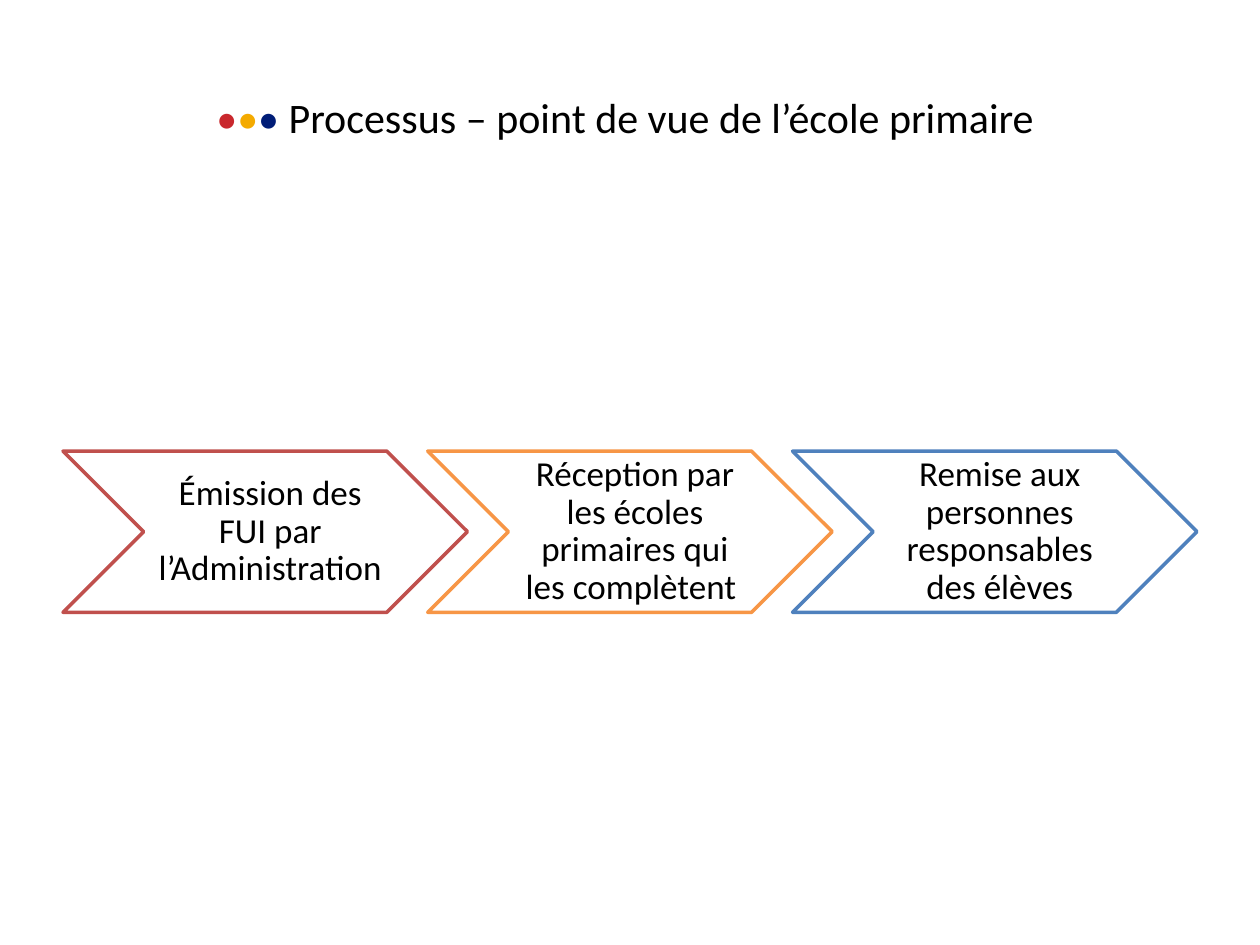
from pptx import Presentation
from pptx.dml.color import RGBColor
from pptx.enum.shapes import MSO_SHAPE as Shape
from pptx.enum.text import MSO_ANCHOR as Anchor, PP_ALIGN as Align
from pptx.util import Inches, Pt

TITLE = [
    ("•", "C9282D"),
    ("•", "F4AA00"),
    ("• ", "001D77"),
    ("Processus – point de vue de l’école primaire ", "000000"),
]
STEPS = [
    ("Émission des FUI par l’Administration", "C0504D"),
    ("Réception par les écoles primaires qui les complètent ", "F79646"),
    ("Remise aux personnes responsables des élèves", "4F81BD"),
]
FONT = "Calibri"
WIDTH, HEIGHT = 10, 7.5
MARGIN = WIDTH * 0.05
STEP_WIDTH, STEP_HEIGHT = 3.21, 1.28
STEP_TOP = 3.58
# The steps share the width between the margins and overlap evenly.
STEP_PITCH = (WIDTH - 2 * MARGIN - STEP_WIDTH) / (len(STEPS) - 1)
LABEL_INDENT, LABEL_WIDTH = 0.65, 1.93
LABEL_INSETS = {"margin_left": 0.09, "margin_right": 0.03,
                "margin_top": 0.03, "margin_bottom": 0.03}


def color(hex_value):
    return RGBColor.from_string(hex_value)


def add_text(slide, box, runs, size, insets=None, line_spacing=1):
    """Add a wrapped, centred text box made of (text, colour) runs."""
    frame = slide.shapes.add_textbox(*map(Inches, box)).text_frame
    frame.word_wrap = True
    frame.vertical_anchor = Anchor.MIDDLE
    for side, inset in (insets or {}).items():
        setattr(frame, side, Inches(inset))
    paragraph = frame.paragraphs[0]
    paragraph.alignment = Align.CENTER
    paragraph.line_spacing = line_spacing
    for text, run_color in runs:
        run = paragraph.add_run()
        run.text = text
        run.font.name = FONT
        run.font.size = Pt(size)
        run.font.color.rgb = color(run_color)


def add_step(slide, left, label, outline):
    box = (left, STEP_TOP, STEP_WIDTH, STEP_HEIGHT)
    chevron = slide.shapes.add_shape(Shape.CHEVRON, *map(Inches, box))
    chevron.shadow.inherit = False
    chevron.fill.solid()
    chevron.fill.fore_color.rgb = color("FFFFFF")
    chevron.line.color.rgb = color(outline)
    chevron.line.width = Pt(2)
    add_text(slide, (left + LABEL_INDENT, STEP_TOP, LABEL_WIDTH, STEP_HEIGHT),
             [(label, "000000")], 20, LABEL_INSETS, 0.9)


def main():
    deck = Presentation()
    deck.slide_width, deck.slide_height = Inches(WIDTH), Inches(HEIGHT)
    slide = deck.slides.add_slide(deck.slide_layouts[6])
    add_text(slide, (MARGIN, HEIGHT * 0.04, WIDTH - 2 * MARGIN, 1.25), TITLE, 24)
    for column, (label, outline) in enumerate(STEPS):
        add_step(slide, MARGIN + column * STEP_PITCH, label, outline)
    deck.save("out.pptx")


if __name__ == "__main__":
    main()
